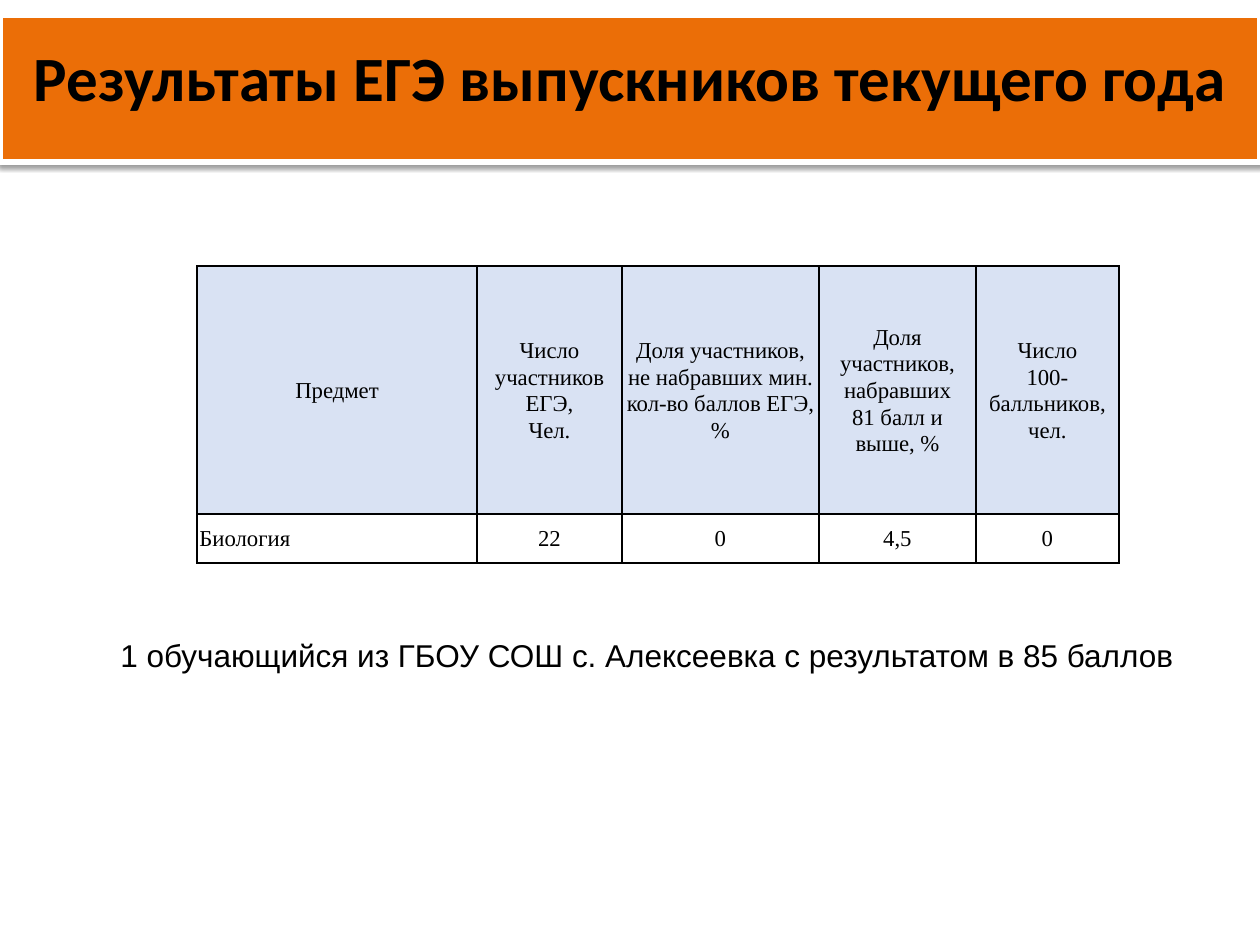
from lxml import etree
from pptx import Presentation
from pptx import util as u
from pptx.dml.color import RGBColor
from pptx.enum import shapes, text
from pptx.oxml.ns import qn

PX = 914400 // 126
TITLE = "Результаты ЕГЭ выпускников текущего года"
HEADER = [
    ["Предмет"],
    ["Число участников ЕГЭ,", "Чел."],
    ["Доля участников,", "не набравших мин. кол-во баллов ЕГЭ, %"],
    ["Доля участников, набравших", "81 балл и выше, %"],
    ["Число", "100-балльников, чел."],
]
RESULTS = [["Биология"], ["22"], ["0"], ["4,5"], ["0"]]
NOTE = "1 обучающийся из ГБОУ СОШ с. Алексеевка с результатом в 85 баллов"
COLUMN_WIDTHS = [280, 145, 197, 157, 143]
ROW_HEIGHTS = [248, 49]

TITLE_FONT = {"name": "Calibri", "size": u.Pt(36), "bold": True}
CELL_FONT = {"name": "Times New Roman", "size": u.Pt(13), "bold": False}
NOTE_FONT = {"name": "Arial", "size": u.Pt(18)}
CELL_FORMAT = {
    "margin_left": u.Inches(0.02), "margin_right": u.Inches(0.02),
    "margin_top": 0, "margin_bottom": 0,
    "vertical_anchor": text.MSO_ANCHOR.MIDDLE,
}


def color(value):
    return RGBColor.from_string(value)


def box(*lengths):
    return [length * PX for length in lengths]


def apply(target, values):
    for key, value in values.items():
        setattr(target, key, value)


def write(frame, lines, font, align, spacing=None):
    frame.text = "\n".join(lines)
    for paragraph in frame.paragraphs:
        paragraph.alignment = align
        paragraph.line_spacing = spacing
        apply(paragraph.font, font)
        paragraph.font.color.rgb = color("000000")


def child(parent, tag, **attributes):
    return etree.SubElement(parent, qn(tag), attributes)


def add_borders(cell):
    properties = cell._tc.get_or_add_tcPr()
    for side in "LRTB":
        line = child(properties, f"a:ln{side}", w=str(u.Pt(1)))
        child(child(line, "a:solidFill"), "a:srgbClr", val="000000")


def add_banner(slide):
    banner = slide.shapes.add_shape(shapes.MSO_SHAPE.RECTANGLE, *box(0, 15, 1260, 147))
    banner.fill.solid()
    banner.fill.fore_color.rgb = color("EB6E07")
    banner.line.color.rgb = color("FFFFFF")
    banner.line.width = u.Pt(3)
    banner.shadow.inherit = False
    effects = banner._element.spPr.find(qn("a:effectLst"))
    shadow = child(effects, "a:outerShdw", blurRad=str(u.Pt(3.1)),
                   dist=str(u.Pt(1.6)), dir="5400000", rotWithShape="0")
    child(child(shadow, "a:srgbClr", val="000000"), "a:alpha", val="38000")


def add_title(slide):
    frame = slide.shapes.add_textbox(*box(0, 39, 1260, 151)).text_frame
    apply(frame, {"word_wrap": True, "margin_top": 0})
    write(frame, [TITLE], TITLE_FONT, text.PP_ALIGN.CENTER)


def add_results(slide):
    rows = [HEADER, RESULTS]
    area = box(197, 266, sum(COLUMN_WIDTHS), sum(ROW_HEIGHTS))
    table = slide.shapes.add_table(len(rows), len(HEADER), *area).table
    for column, width in zip(table.columns, COLUMN_WIDTHS):
        column.width = width * PX
    for r, (row, height) in enumerate(zip(rows, ROW_HEIGHTS)):
        table.rows[r].height = height * PX
        for c, lines in enumerate(row):
            cell = table.cell(r, c)
            apply(cell, CELL_FORMAT)
            add_borders(cell)
            if r == 0:
                cell.fill.solid()
                cell.fill.fore_color.rgb = color("D9E2F3")
            else:
                cell.fill.background()
            is_subject = r > 0 and c == 0
            align = text.PP_ALIGN.LEFT if is_subject else text.PP_ALIGN.CENTER
            write(cell.text_frame, lines, CELL_FONT, align, 1.07)


def add_note(slide):
    frame = slide.shapes.add_textbox(*box(108, 630, 1089, 50)).text_frame
    apply(frame, {"word_wrap": False, "auto_size": text.MSO_AUTO_SIZE.SHAPE_TO_FIT_TEXT})
    write(frame, [NOTE], NOTE_FONT, text.PP_ALIGN.LEFT)


def main():
    deck = Presentation()
    deck.slide_width, deck.slide_height = box(1260, 945)
    slide = deck.slides.add_slide(deck.slide_layouts[6])
    add_banner(slide)
    add_title(slide)
    add_results(slide)
    add_note(slide)
    deck.save("out.pptx")


if __name__ == "__main__":
    main()
